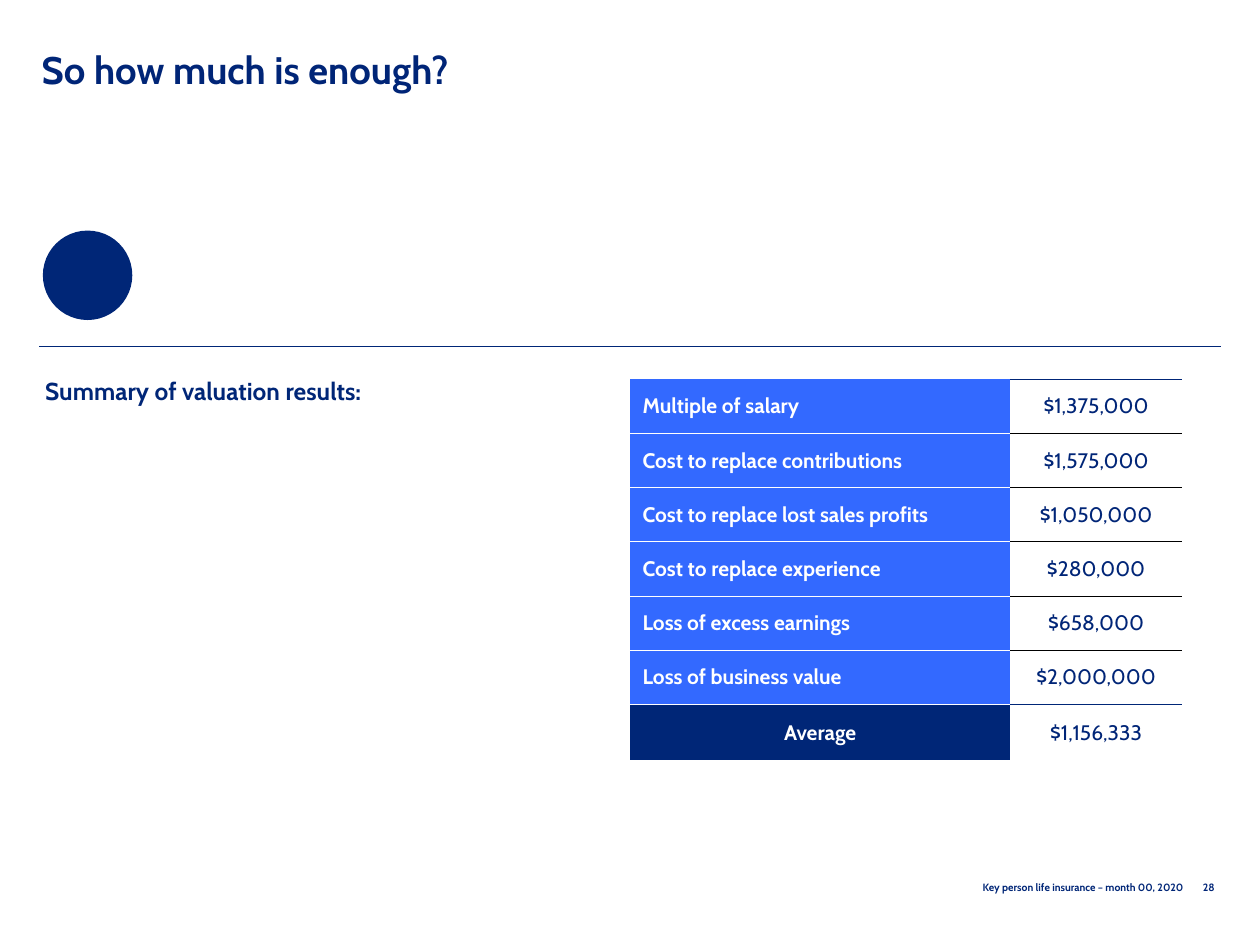
"""Build the key person insurance valuation summary slide."""
from dataclasses import dataclass

from lxml.etree import SubElement
from pptx import Presentation
from pptx.dml.color import RGBColor
from pptx.enum.shapes import MSO_CONNECTOR, MSO_SHAPE
from pptx.enum.text import MSO_ANCHOR, MSO_AUTO_SIZE, PP_ALIGN
from pptx.oxml.ns import qn
from pptx.util import Inches, Pt

NAVY = "002677"
TEXT_NAVY = "002577"
BLUE = "3369FF"
WHITE = "FFFFFF"
BLACK = "000000"


@dataclass
class TextStyle:
    size: float
    color: str
    bold: bool = True
    align: PP_ALIGN = PP_ALIGN.LEFT
    anchor: MSO_ANCHOR = MSO_ANCHOR.TOP
    line_spacing: float | None = None


@dataclass
class TextItem:
    text: str
    box: tuple[float, float, float, float]
    style: TextStyle


@dataclass
class Valuation:
    label: str
    amount: str


TITLE = TextItem("So how much is enough?", (0.23, 0.42, 9.45, 0.82),
                 TextStyle(21.9, TEXT_NAVY, line_spacing=18.8))
TEXT_ITEMS = [
    TextItem("28", (9.4, 6.94, 0.34, 0.15), TextStyle(6, TEXT_NAVY, align=PP_ALIGN.RIGHT)),
    TextItem("Key person life insurance – month 00, 2020", (6.11, 6.94, 3.38, 0.2),
             TextStyle(6, NAVY, align=PP_ALIGN.RIGHT, anchor=MSO_ANCHOR.MIDDLE)),
    TextItem("Summary of valuation results:", (0.26, 2.89, 4.35, 1.86),
             TextStyle(14, NAVY, line_spacing=20)),
]
VALUATIONS = [
    Valuation("Multiple of salary", "$1,375,000"),
    Valuation("Cost to replace contributions", "$1,575,000"),
    Valuation("Cost to replace lost sales profits", "$1,050,000"),
    Valuation("Cost to replace experience", "$280,000"),
    Valuation("Loss of excess earnings", "$658,000"),
    Valuation("Loss of business value", "$2,000,000"),
    Valuation("Average", "$1,156,333"),
]


def rgb(color: str) -> RGBColor:
    """Convert a hex string to a colour."""
    return RGBColor.from_string(color)


def set_attributes(target, values: dict) -> None:
    """Set every attribute named in a dict of format values."""
    for name, value in values.items():
        setattr(target, name, value)


def format_paragraph(paragraph, style: TextStyle) -> None:
    """Apply a text style to a paragraph."""
    paragraph.alignment = style.align
    if style.line_spacing:
        paragraph.line_spacing = Pt(style.line_spacing)
    set_attributes(paragraph.font, {"name": "Cabin", "size": Pt(style.size), "bold": style.bold})
    paragraph.font.color.rgb = rgb(style.color)


def fill_text(shape, item: TextItem) -> None:
    """Write and format the text of a shape."""
    text_frame = shape.text_frame
    text_frame.text = item.text
    set_attributes(text_frame, {"word_wrap": True, "auto_size": MSO_AUTO_SIZE.NONE,
                                "vertical_anchor": item.style.anchor})
    format_paragraph(text_frame.paragraphs[0], item.style)


def place_title(slide, item: TextItem) -> None:
    """Move and format the title placeholder."""
    title = slide.shapes.title
    set_attributes(title, dict(zip(("left", "top", "width", "height"), map(Inches, item.box))))
    fill_text(title, item)


def add_divider(slide) -> None:
    """Draw the horizontal rule below the circle."""
    line = slide.shapes.add_connector(MSO_CONNECTOR.STRAIGHT, Inches(0.31), Inches(2.75),
                                      Inches(9.69), Inches(2.75))
    line.line.color.rgb = rgb(NAVY)
    line.line.width = Pt(0.5)
    SubElement(line._element.spPr, qn("a:effectLst"))


def add_circle(slide) -> None:
    """Draw the navy circle."""
    circle = slide.shapes.add_shape(MSO_SHAPE.OVAL, Inches(0.34), Inches(1.83),
                                    Inches(0.71), Inches(0.71))
    circle.shadow.inherit = False
    circle.fill.solid()
    circle.fill.fore_color.rgb = rgb(NAVY)
    circle.line.fill.background()


def set_borders(cell, top: tuple[str, float], bottom: tuple[str, float]) -> None:
    """Give a cell top and bottom borders and no side borders."""
    properties = cell._tc.get_or_add_tcPr()
    for side, border in {"L": None, "R": None, "T": top, "B": bottom}.items():
        line = SubElement(properties, qn(f"a:ln{side}"))
        if border is None:
            SubElement(line, qn("a:noFill"))
        else:
            color, width = border
            line.set("w", str(Pt(width)))
            SubElement(SubElement(line, qn("a:solidFill")), qn("a:srgbClr")).set("val", color)


def fill_cell(cell, text: str, style: TextStyle, margins: tuple[float, float],
              fill: str | None) -> None:
    """Write a table cell and set its fill and margins."""
    cell.text = text
    left, right = margins
    set_attributes(cell, {"margin_left": Inches(left), "margin_right": Inches(right),
                          "margin_top": Inches(0.03), "margin_bottom": Inches(0.03),
                          "vertical_anchor": style.anchor})
    format_paragraph(cell.text_frame.paragraphs[0], style)
    if fill:
        cell.fill.solid()
        cell.fill.fore_color.rgb = rgb(fill)
    else:
        cell.fill.background()


def add_valuation_table(slide, valuations: list[Valuation]) -> None:
    """Build the table of valuations, closed by the average row."""
    count = len(valuations)
    table = slide.shapes.add_table(count, 2, Inches(5), Inches(3.01),
                                   Inches(4.38), Inches(3.03)).table
    set_attributes(table, {"first_row": False, "horz_banding": False})
    for column, width in zip(table.columns, (3.02, 1.36)):
        column.width = Inches(width)
    label_borders = [(BLUE, 0.5)] + [(WHITE, 0.5)] * (count - 2) + [(WHITE, 1), (WHITE, 1.5)]
    amount_borders = [(TEXT_NAVY, 0.5)] + [(BLACK, 0.5)] * (count - 2) + [(NAVY, 1), (WHITE, 1.5)]
    amount_style = TextStyle(12, TEXT_NAVY, False, PP_ALIGN.CENTER, MSO_ANCHOR.MIDDLE)
    for index, valuation in enumerate(valuations):
        is_average = index == count - 1
        table.rows[index].height = Inches(0.45 if is_average else 0.43)
        label_cell, amount_cell = table.cell(index, 0), table.cell(index, 1)
        set_borders(label_cell, *label_borders[index:index + 2])
        set_borders(amount_cell, *amount_borders[index:index + 2])
        label_style = TextStyle(12, WHITE, True, PP_ALIGN.CENTER if is_average else PP_ALIGN.LEFT,
                                MSO_ANCHOR.MIDDLE)
        fill_cell(label_cell, valuation.label, label_style,
                  (0.1, 0.1 if is_average else 0.2), NAVY if is_average else BLUE)
        fill_cell(amount_cell, valuation.amount, amount_style, (0.06, 0.06), None)


def main() -> None:
    """Create and save the presentation."""
    presentation = Presentation()
    set_attributes(presentation, {"slide_width": Inches(10), "slide_height": Inches(7.5)})
    slide = presentation.slides.add_slide(presentation.slide_layouts[5])
    place_title(slide, TITLE)
    for item in TEXT_ITEMS:
        fill_text(slide.shapes.add_textbox(*map(Inches, item.box)), item)
    add_divider(slide)
    add_circle(slide)
    add_valuation_table(slide, VALUATIONS)
    presentation.save("out.pptx")


if __name__ == "__main__":
    main()
